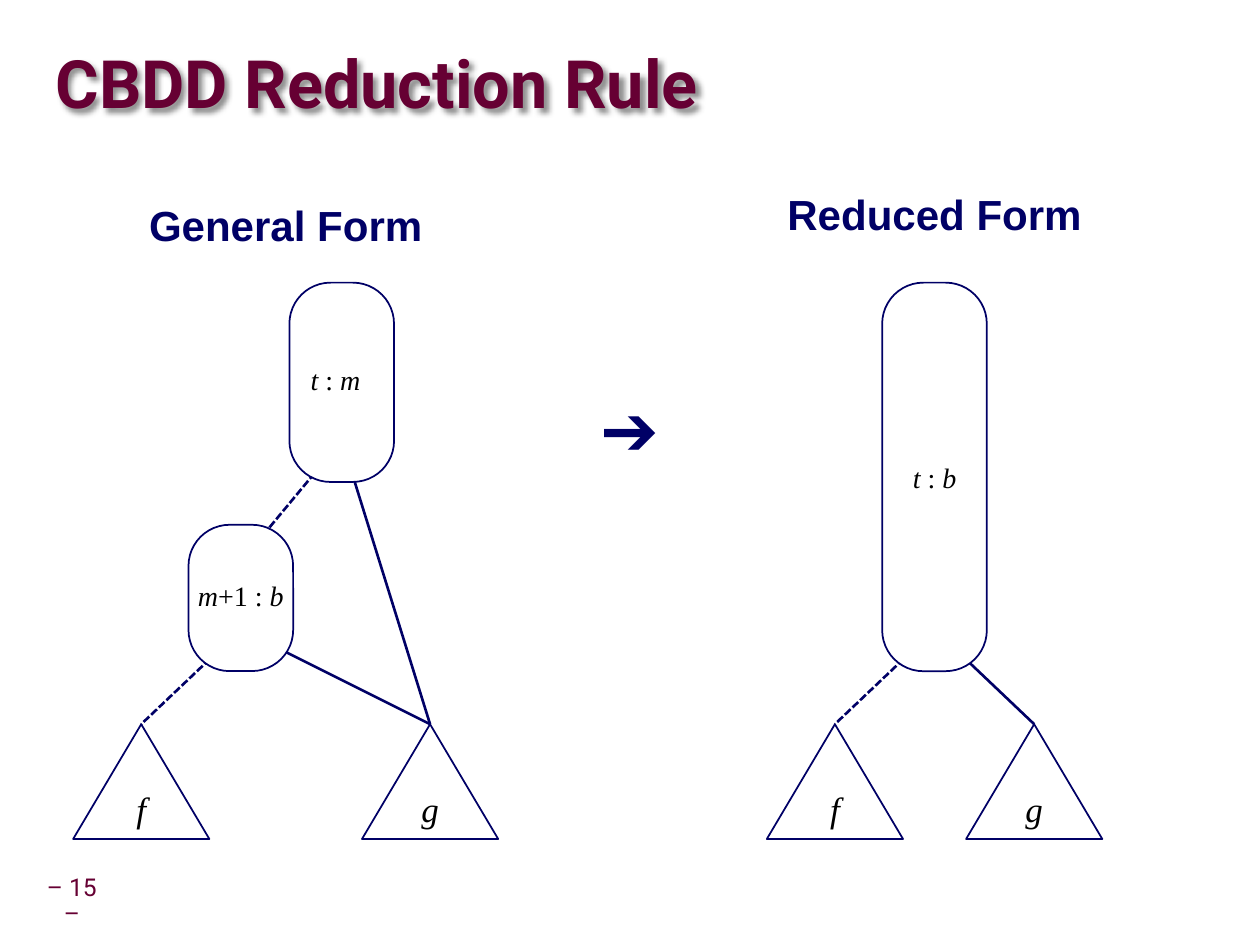
from lxml import etree
from pptx import Presentation
from pptx.dml.color import RGBColor
from pptx.enum.dml import MSO_LINE
from pptx.enum.shapes import MSO_CONNECTOR, MSO_SHAPE
from pptx.enum.text import MSO_ANCHOR as Anchor, PP_ALIGN as Align
from pptx.oxml import parse_xml
from pptx.oxml.ns import nsdecls, qn
from pptx.util import Inches, Pt

COLORS = {"navy": "000066", "maroon": "660033", "black": "000000", "white": "FFFFFF"}
SANS, HEADING, MATH = "Arial", "Roboto", "Times New Roman"

NODE_W = 0.83
NODE_TOP, NODE_BOTTOM = 2.24, 5.32
LEAF_W, LEAF_H, LEAF_TOP = 1.08, 0.91, 5.74


def color(name):
    return RGBColor.from_string(COLORS[name])


class DiagramSlide:
    def __init__(self, prs):
        self.slide = prs.slides.add_slide(prs.slide_layouts[6])
        self.shapes = self.slide.shapes

    def start_group(self):
        """Collect the elements that follow in a new group."""
        self.shapes = self.slide.shapes.add_group_shape().shapes

    def end_group(self):
        self.shapes = self.slide.shapes

    def set_text(self, shape, runs, size, font, ink, bold=False, align=Align.CENTER,
                 anchor=Anchor.MIDDLE, insets=(0, 0, 0, 0), wrap=False, spacing=None):
        """Fill a shape with one paragraph of (text, italic) runs."""
        frame = shape.text_frame
        frame.word_wrap = wrap
        frame.vertical_anchor = anchor
        (frame.margin_left, frame.margin_top,
         frame.margin_right, frame.margin_bottom) = map(Inches, insets)
        paragraph = frame.paragraphs[0]
        paragraph.alignment = align
        if spacing:
            paragraph.line_spacing = spacing
        for text, italic in runs:
            run = paragraph.add_run()
            run.text = text
            run.font.name = font
            run.font.size = Pt(size)
            run.font.bold = bold
            run.font.italic = italic
            run.font.color.rgb = color(ink)

    def label(self, text, box, size, font=SANS, ink="navy", bold=True,
              anchor=Anchor.TOP, insets=(0.1, 0.05, 0.1, 0.05), spacing=0.9, **style):
        text_box = self.shapes.add_textbox(*map(Inches, box))
        self.set_text(text_box, [(text, False)], size, font, ink, bold,
                      anchor=anchor, insets=insets, spacing=spacing, **style)
        return text_box

    def title(self, text, box):
        heading = self.label(text, box, 38, HEADING, "maroon", anchor=Anchor.MIDDLE,
                             insets=(0, 0, 0, 0), spacing=0.87, align=Align.LEFT, wrap=True)
        heading._element.spPr.append(parse_xml(
            f'<a:effectLst {nsdecls("a")}>'
            '<a:outerShdw blurRad="38100" dist="38100" dir="2700000" algn="tl">'
            '<a:srgbClr val="000000"><a:alpha val="43000"/></a:srgbClr>'
            '</a:outerShdw></a:effectLst>'))

    def outline(self, preset, box):
        shape = self.shapes.add_shape(preset, *map(Inches, box))
        shape.shadow.inherit = False
        shape.fill.solid()
        shape.fill.fore_color.rgb = color("white")
        shape.line.color.rgb = color("navy")
        shape.line.width = Pt(1)
        return shape

    def node(self, center, top, bottom, runs, insets):
        """Rounded box for a chain of levels."""
        box = (center - NODE_W / 2, top, NODE_W, bottom - top)
        shape = self.outline(MSO_SHAPE.ROUNDED_RECTANGLE, box)
        shape.adjustments[0] = 0.393
        self.set_text(shape, runs, 16, MATH, "black", insets=insets)

    def leaf(self, center, name):
        """Triangle for a subgraph."""
        shape = self.outline(MSO_SHAPE.ISOSCELES_TRIANGLE,
                             (center - LEAF_W / 2, LEAF_TOP, LEAF_W, LEAF_H))
        self.set_text(shape, [(name, True)], 20, MATH, "black", anchor=Anchor.TOP,
                      insets=(0.1, 0.05, 0.1, 0.05), wrap=True)

    def edge(self, start, end, dashed=False):
        line = self.shapes.add_connector(MSO_CONNECTOR.STRAIGHT, *map(Inches, start + end))
        line.line.color.rgb = color("navy")
        line.line.width = Pt(1.5)
        if dashed:
            line.line.dash_style = MSO_LINE.SQUARE_DOT
        etree.SubElement(line._element.spPr, qn("a:effectLst"))


def draw_general_form(page):
    f, g, upper, lower = 1.12, 3.41, 2.71, 1.91
    upper_hub, lower_hub = (upper, 3.49), (lower, 4.99)
    page.start_group()
    page.leaf(f, "f")
    page.edge(lower_hub, (f, LEAF_TOP), dashed=True)
    page.edge(lower_hub, (g, LEAF_TOP))
    page.leaf(g, "g")
    page.edge(upper_hub, (1.88, 4.49), dashed=True)
    page.edge(upper_hub, (g, LEAF_TOP))
    page.node(upper, NODE_TOP, 3.82, [("t ", True), (": ", False), ("m", True)],
              (0, 0, 0.1, 0.05))
    page.node(lower, 4.16, NODE_BOTTOM, [("m", True), ("+1 : ", False), ("b", True)],
              (0, 0, 0, 0.05))
    page.end_group()


def draw_reduced_form(page):
    f, g, merged = 6.62, 8.2, 7.41
    hub = (merged, 4.99)
    page.start_group()
    page.leaf(f, "f")
    page.leaf(g, "g")
    page.edge(hub, (f, LEAF_TOP), dashed=True)
    page.edge(hub, (g, LEAF_TOP))
    page.node(merged, NODE_TOP, NODE_BOTTOM, [("t ", True), (": ", False), ("b", True)],
              (0, 0.05, 0, 0.05))
    page.end_group()


def main():
    prs = Presentation()
    prs.slide_width, prs.slide_height = Inches(9.99), Inches(7.49)
    page = DiagramSlide(prs)
    page.label("– 15 –", (0.29, 6.99, 0.56, 0.31), 14, HEADING, "maroon", bold=False,
               anchor=Anchor.MIDDLE, insets=(0.05,) * 4, wrap=True)
    page.title("CBDD Reduction Rule", (0.44, 0.27, 9.52, 0.85))
    page.label("General Form", (1.07, 1.58, 2.39, 0.46), 24)
    page.label("Reduced Form", (6.13, 1.49, 2.56, 0.46), 24)
    draw_general_form(page)
    draw_reduced_form(page)
    page.label("➔", (4.59, 3.08, 0.8, 0.71), 40)
    prs.save("out.pptx")


if __name__ == "__main__":
    main()
